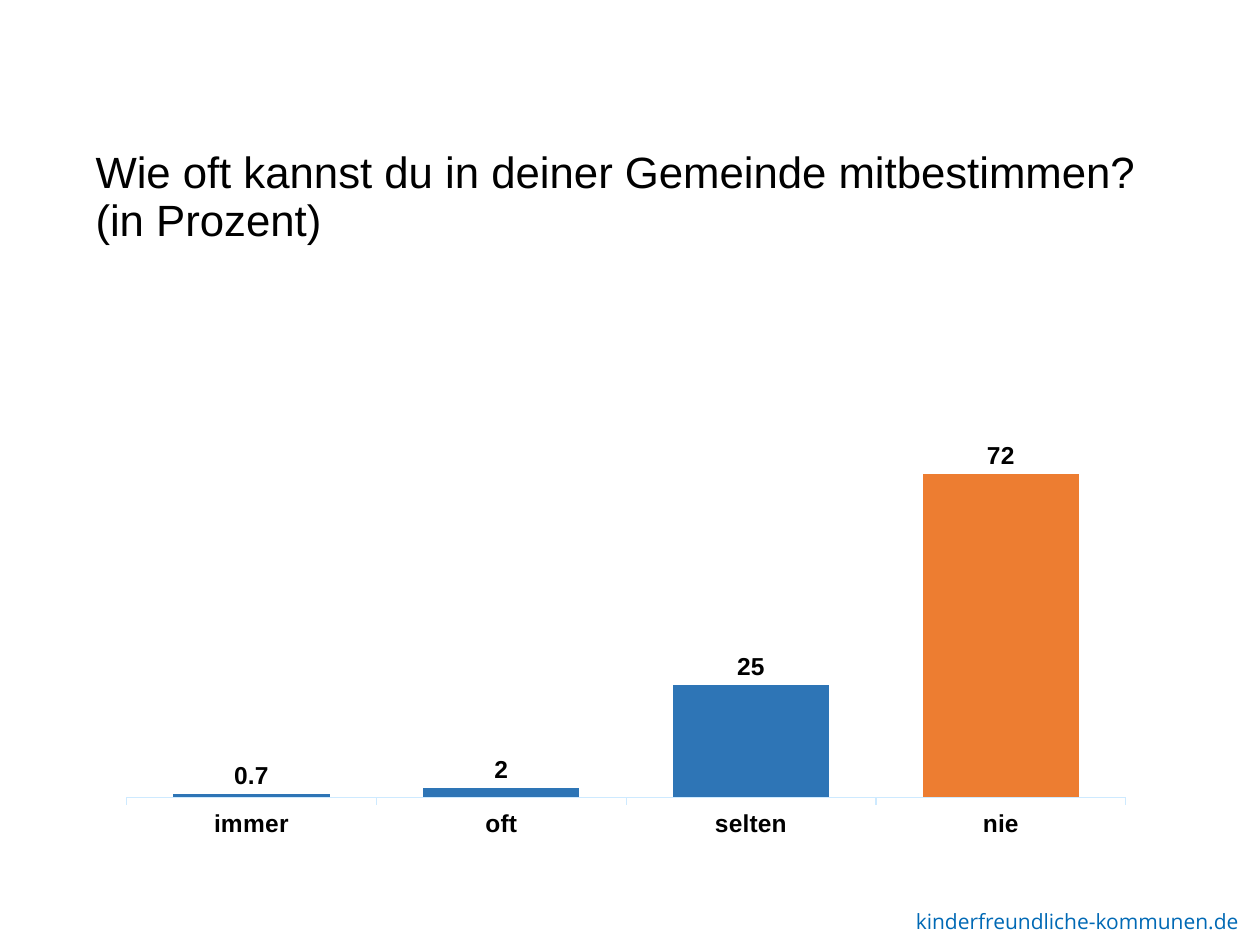
import dataclasses

import lxml.etree
import pptx
import pptx.chart.data
import pptx.dml.color
import pptx.enum.chart
import pptx.enum.text
import pptx.oxml
import pptx.oxml.ns
import pptx.util

Inches = pptx.util.Inches
Pt = pptx.util.Pt


@dataclasses.dataclass(frozen=True)
class Theme:
    text: str = "000000"
    link: str = "0069B5"
    bar: str = "2E75B6"
    highlight: str = "ED7D31"
    axis: str = "CEEAFF"
    body_font: str = "Arial"
    footer_font: str = "Open Sans"
    title_size: float = 25
    chart_size: float = 14
    footer_size: float = 12


class SlideBuilder:
    def __init__(self, slide, theme):
        self.slide = slide
        self.theme = theme

    def color(self, value):
        return pptx.dml.color.RGBColor.from_string(value)

    def style_font(self, font, name, size, color, bold=False):
        font.name = name
        font.size = Pt(size)
        font.bold = bold
        font.color.rgb = self.color(color)

    def text(self, bounds, lines, font_name, size, color, line_spacing=1.0):
        box = self.slide.shapes.add_textbox(*map(Inches, bounds))
        frame = box.text_frame
        frame.word_wrap = True
        frame.vertical_anchor = pptx.enum.text.MSO_ANCHOR.TOP
        frame.text = "\n".join(lines)
        for paragraph in frame.paragraphs:
            paragraph.line_spacing = line_spacing
            self.style_font(paragraph.font, font_name, size, color)

    def place_plot(self, chart, plot_bounds):
        plot_area = chart.element.find(".//" + pptx.oxml.ns.qn("c:plotArea"))
        for old_layout in plot_area.findall(pptx.oxml.ns.qn("c:layout")):
            plot_area.remove(old_layout)
        settings = [("layoutTarget", "inner"), ("xMode", "edge"), ("yMode", "edge")]
        settings += zip("xywh", plot_bounds)
        layout = pptx.oxml.parse_xml(
            f"<c:layout {pptx.oxml.ns.nsdecls('c')}><c:manualLayout/></c:layout>"
        )
        for tag, value in settings:
            element = lxml.etree.SubElement(layout[0], pptx.oxml.ns.qn(f"c:{tag}"))
            element.set("val", str(value))
        plot_area.insert(0, layout)

    def column_chart(self, bounds, plot_bounds, values, highlighted, maximum):
        theme = self.theme
        data = pptx.chart.data.CategoryChartData()
        data.categories = list(values)
        data.add_series("Series 1", list(values.values()))
        chart = self.slide.shapes.add_chart(
            pptx.enum.chart.XL_CHART_TYPE.COLUMN_CLUSTERED,
            *map(Inches, bounds),
            data,
        ).chart
        chart.has_title = False
        chart.has_legend = False
        self.style_font(chart.font, theme.body_font, theme.chart_size, theme.text, True)

        value_axis = chart.value_axis
        value_axis.minimum_scale = 0
        value_axis.maximum_scale = maximum
        value_axis.has_major_gridlines = False
        value_axis.visible = False

        category_axis = chart.category_axis
        category_axis.major_tick_mark = pptx.enum.chart.XL_TICK_MARK.OUTSIDE
        category_axis.format.line.color.rgb = self.color(theme.axis)
        category_axis.format.line.width = Pt(0.75)

        plot = chart.plots[0]
        plot.gap_width = 60
        plot.vary_by_categories = False
        plot.has_data_labels = True
        labels = plot.data_labels
        labels.show_value = True
        labels.position = pptx.enum.chart.XL_LABEL_POSITION.OUTSIDE_END
        self.style_font(labels.font, theme.body_font, theme.chart_size, theme.text, True)

        series = plot.series[0]
        series.format.fill.solid()
        series.format.fill.fore_color.rgb = self.color(theme.bar)
        point_fill = series.points[list(values).index(highlighted)].format.fill
        point_fill.solid()
        point_fill.fore_color.rgb = self.color(theme.highlight)
        self.place_plot(chart, plot_bounds)


def main():
    presentation = pptx.Presentation()
    presentation.slide_width = Inches(10)
    presentation.slide_height = Inches(7.5)
    theme = Theme()
    slide = presentation.slides.add_slide(presentation.slide_layouts[6])
    builder = SlideBuilder(slide, theme)

    builder.text(
        (7.17, 7.16, 2.93, 0.3),
        ["kinderfreundliche-kommunen.de"],
        theme.footer_font,
        theme.footer_size,
        theme.link,
    )
    builder.text(
        (0.66, 1.15, 8.62, 1.07),
        ["Wie oft kannst du in deiner Gemeinde mitbestimmen?", "(in Prozent)"],
        theme.body_font,
        theme.title_size,
        theme.text,
        line_spacing=0.9,
    )
    builder.column_chart(
        (0.66, 2.08, 8.62, 4.83),
        (0.04, 0.29, 0.92, 0.59),
        {"immer": 0.7, "oft": 2, "selten": 25, "nie": 72},
        highlighted="nie",
        maximum=80,
    )
    presentation.save("out.pptx")


if __name__ == "__main__":
    main()
